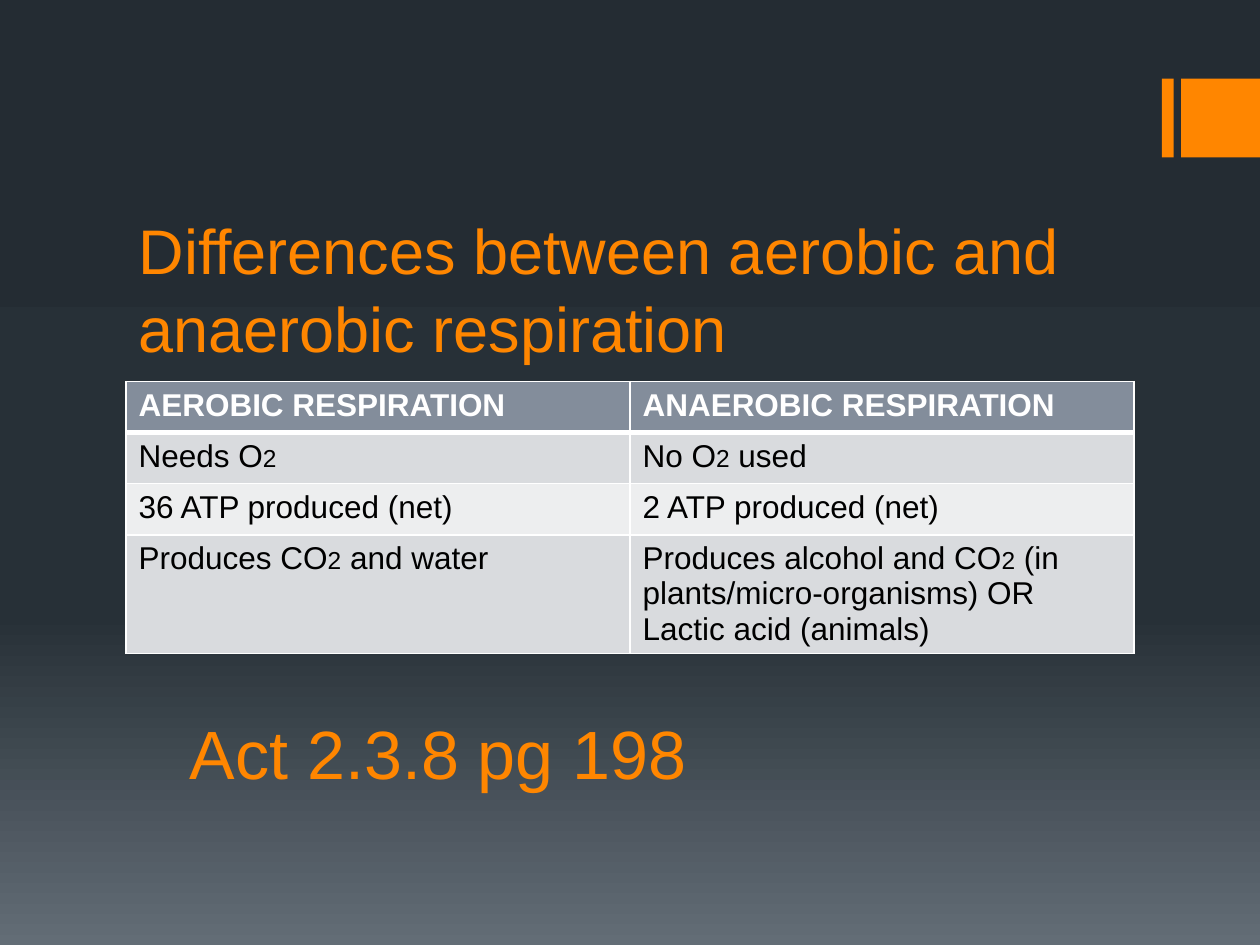
"""Build a slide that compares aerobic and anaerobic respiration in a table."""
from copy import deepcopy

from lxml.etree import SubElement
from pptx import Presentation
from pptx.dml.color import RGBColor
from pptx.enum.shapes import MSO_SHAPE
from pptx.enum.text import MSO_ANCHOR, MSO_AUTO_SIZE, PP_ALIGN
from pptx.oxml.ns import qn
from pptx.util import Pt

ORANGE, WHITE, BLACK = "FF8600", "FFFFFF", "000000"
HEADER_FILL, BAND_FILLS = "838D9B", ("D9DBDE", "EDEEEF")
BACKGROUND_STOPS = ((0, "242C33"), (0.65, "273037"), (1, "636D76"))
SUBSCRIPT = "2"
ROWS = (
    (("AEROBIC RESPIRATION",), ("ANAEROBIC RESPIRATION",)),
    (("Needs O", SUBSCRIPT), ("No O", SUBSCRIPT, " used")),
    (("36 ATP produced (net)",), ("2 ATP produced (net)",)),
    (("Produces CO", SUBSCRIPT, " and water"),
     ("Produces alcohol and CO", SUBSCRIPT,
      " (in plants/micro-organisms) OR Lactic acid (animals)")),
)


def color(value):
    return RGBColor.from_string(value)


class SlideBuilder:
    def __init__(self, slide, font_name="Arial"):
        self.slide = slide
        self.font_name = font_name

    def background(self, stops):
        fill = self.slide.background.fill
        fill.gradient()
        fill.gradient_angle = 270
        stop_list = next(self.slide.element.iter(qn("a:gsLst")))
        while len(stop_list) < len(stops):
            stop_list.append(deepcopy(stop_list[0]))
        for stop, (position, value) in zip(fill.gradient_stops, stops):
            stop.position = position
            stop.color.rgb = color(value)

    def bar(self, left, top, width, height):
        shape = self.slide.shapes.add_shape(
            MSO_SHAPE.RECTANGLE, Pt(left), Pt(top), Pt(width), Pt(height))
        shape.shadow.inherit = False
        shape.fill.solid()
        shape.fill.fore_color.rgb = color(ORANGE)
        shape.line.fill.background()

    def run(self, paragraph, text, value, **formats):
        run = paragraph.add_run()
        run.text = text
        for name, setting in {"name": self.font_name, **formats}.items():
            setattr(run.font, name, setting)
        run.font.color.rgb = color(value)

    def heading(self, shape, text, size, left, top, width, height):
        box = {"left": left, "top": top, "width": width, "height": height}
        for name, length in box.items():
            setattr(shape, name, Pt(length))
        frame_formats = {"word_wrap": True, "auto_size": MSO_AUTO_SIZE.NONE,
                         "vertical_anchor": MSO_ANCHOR.BOTTOM}
        for name, setting in frame_formats.items():
            setattr(shape.text_frame, name, setting)
        paragraph = shape.text_frame.paragraphs[0]
        paragraph.alignment = PP_ALIGN.LEFT
        paragraph.line_spacing = 1.04
        self.run(paragraph, text, ORANGE, size=Pt(size))

    def title(self, text, size, *box):
        self.heading(self.slide.shapes.title, text, size, *box)

    def text(self, text, size, *box):
        shape = self.slide.shapes.add_textbox(*map(Pt, box))
        self.heading(shape, text, size, *box)

    def borders(self, cell, widths):
        properties = cell._tc.get_or_add_tcPr()
        for index, (side, width) in enumerate(widths.items()):
            line = SubElement(properties, qn(f"a:ln{side}"), w=str(Pt(width)))
            fill = SubElement(line, qn("a:solidFill"))
            SubElement(fill, qn("a:srgbClr"), val=WHITE)
            properties.insert(index, line)

    def table(self, rows, left, top, width, height, row_height):
        frame = self.slide.shapes.add_table(
            len(rows), len(rows[0]), Pt(left), Pt(top), Pt(width), Pt(height))
        for row_index, row in enumerate(rows):
            frame.table.rows[row_index].height = Pt(row_height)
            header = row_index == 0
            fill = HEADER_FILL if header else BAND_FILLS[(row_index - 1) % 2]
            widths = {"L": 1, "R": 1, "T": 3 if row_index == 1 else 1,
                      "B": 3 if header else 1}
            for column_index, parts in enumerate(row):
                cell = frame.table.cell(row_index, column_index)
                cell.fill.solid()
                cell.fill.fore_color.rgb = color(fill)
                self.borders(cell, widths)
                for part in parts:
                    self.run(cell.text_frame.paragraphs[0], part,
                             WHITE if header else BLACK, bold=header,
                             size=Pt(14 if part == SUBSCRIPT else 18))
        frame.height = Pt(height)


def main():
    presentation = Presentation()
    presentation.slide_width, presentation.slide_height = Pt(720), Pt(540)
    layout = presentation.slide_layouts.get_by_name("Title Only")
    builder = SlideBuilder(presentation.slides.add_slide(layout))
    builder.background(BACKGROUND_STOPS)
    builder.bar(664, 45, 6.75, 45)
    builder.bar(675, 45, 45, 45)
    builder.title("Differences between aerobic and anaerobic respiration",
                  36, 72, 121.5, 576, 91)
    builder.table(ROWS, 72, 218, 576, 160, 29.2)
    builder.text("Act 2.3.8 pg 198", 39, 101.5, 366, 576, 91)
    presentation.save("out.pptx")


if __name__ == "__main__":
    main()
